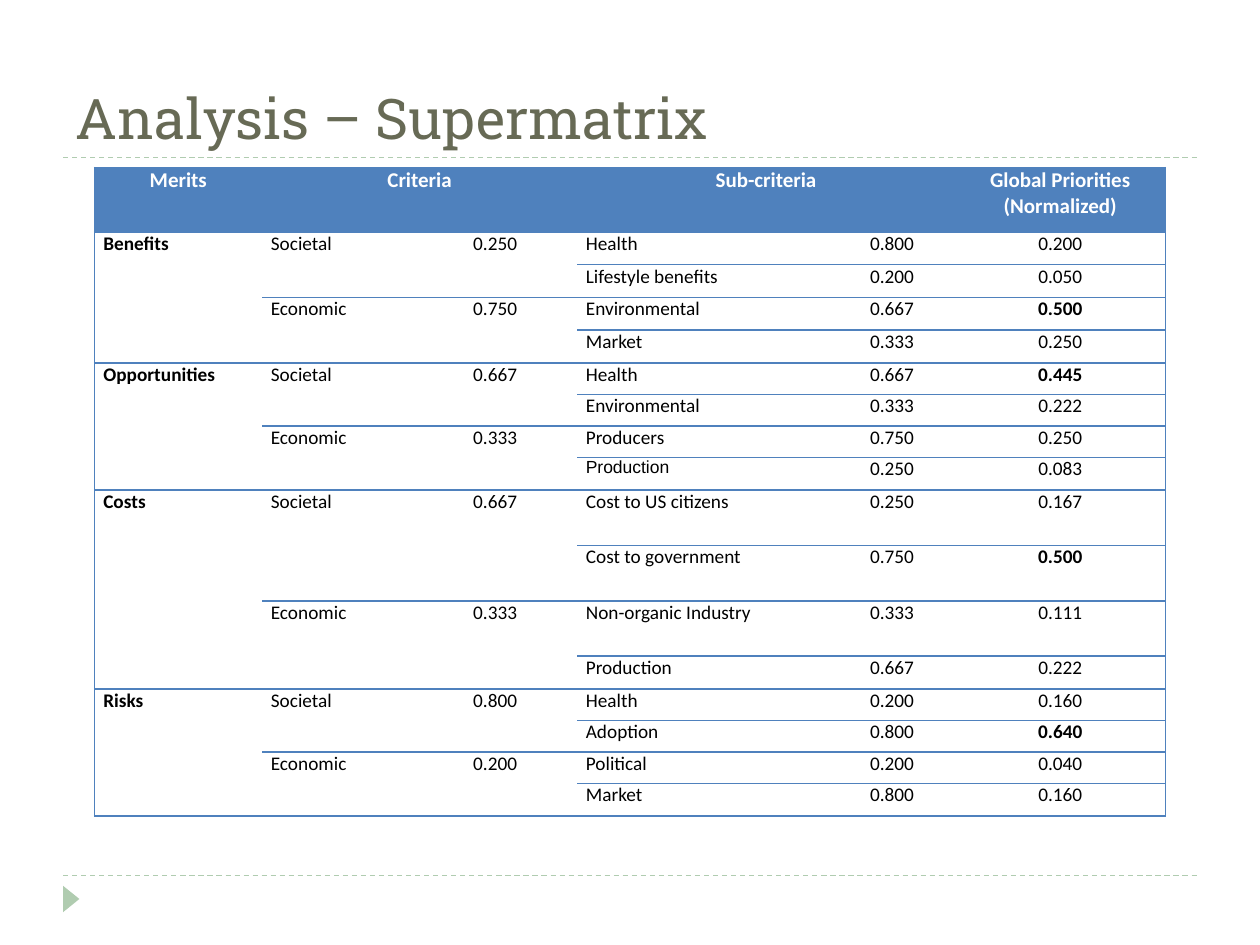
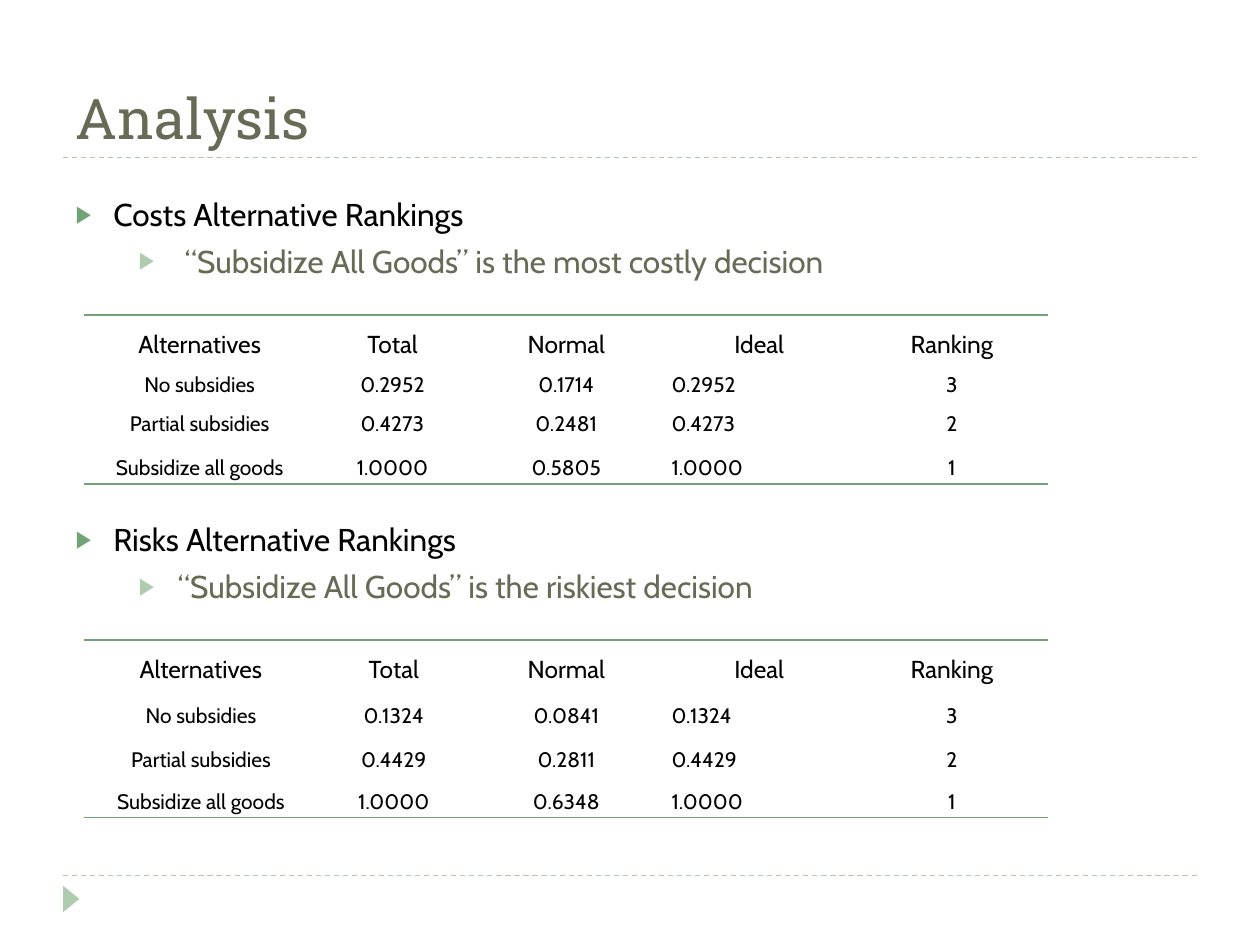
"""Build two analysis slides: a supermatrix and the alternative rankings."""
from lxml.etree import SubElement
from pptx import Presentation
from pptx.dml.color import RGBColor
from pptx.enum.dml import MSO_LINE
from pptx.enum.shapes import MSO_CONNECTOR, MSO_SHAPE
from pptx.enum.text import MSO_ANCHOR, MSO_AUTO_SIZE, PP_ALIGN
from pptx.oxml.ns import qn
from pptx.util import Inches, Pt

COLORS = {"title": "676A55", "rule": "B0CCB0", "accent": "72A376",
          "matrix": "4F81BD", "text": "000000", "white": "FFFFFF"}
NO_STYLE = "{2D5ABB26-0587-4C30-8999-92F81FD0307C}"
LEFT, CENTER = PP_ALIGN.LEFT, PP_ALIGN.CENTER

MATRIX_HEADER = ["Merits", "Criteria", "", "Sub-criteria", "", "Global Priorities (Normalized)"]
MATRIX = {
    "Benefits": [
        ("Societal", "0.250", [("Health", "0.800", "0.200"),
                               ("Lifestyle benefits", "0.200", "0.050")]),
        ("Economic", "0.750", [("Environmental", "0.667", "0.500"),
                               ("Market", "0.333", "0.250")])],
    "Opportunities": [
        ("Societal", "0.667", [("Health", "0.667", "0.445"),
                               ("Environmental", "0.333", "0.222")]),
        ("Economic", "0.333", [("Producers", "0.750", "0.250"),
                               ("Production", "0.250", "0.083")])],
    "Costs": [
        ("Societal", "0.667", [("Cost to US citizens", "0.250", "0.167"),
                               ("Cost to government", "0.750", "0.500")]),
        ("Economic", "0.333", [("Non-organic Industry", "0.333", "0.111"),
                               ("Production", "0.667", "0.222")])],
    "Risks": [
        ("Societal", "0.800", [("Health", "0.200", "0.160"),
                               ("Adoption", "0.800", "0.640")]),
        ("Economic", "0.200", [("Political", "0.200", "0.040"),
                               ("Market", "0.800", "0.160")])],
}
MATRIX_COLUMNS = [1.33, 1.2, 1.3, 2, 1, 1.67]
MATRIX_ROWS = [0.51] + [0.26] * 4 + [0.25] * 3 + [0.26] + [0.44] * 3 + [0.26] + [0.25] * 3 + [0.26]
MATRIX_ALIGN = [LEFT, LEFT, CENTER, LEFT, CENTER, CENTER]

RANKING_HEADER = ["Alternatives", "Total", "Normal", "Ideal", "Ranking"]
RANKINGS = [
    {"points": ["Costs Alternative Rankings", " “Subsidize All Goods” is the most costly decision"],
     "box": (0.5, 1.5, 9, 0.92), "corner": (0.67, 2.5),
     "columns": [1.83, 1.23, 1.53, 1.53, 1.53], "heights": [0.33, 0.28, 0.35, 0.33],
     "rows": [["No subsidies", "0.2952", "0.1714", "0.2952", "3"],
              ["Partial subsidies", "0.4273", "0.2481", "0.4273", "2"],
              ["Subsidize all goods", "1.0000", "0.5805", "1.0000", "1"]]},
    {"points": ["Risks Alternative Rankings", "“Subsidize All Goods” is the riskiest decision"],
     "box": (0.5, 4.08, 9, 1.17), "corner": (0.67, 5.08),
     "columns": [1.85, 1.21, 1.53, 1.53, 1.53], "heights": [0.4, 0.35, 0.33, 0.33],
     "rows": [["No subsidies", "0.1324", "0.0841", "0.1324", "3"],
              ["Partial subsidies", "0.4429", "0.2811", "0.4429", "2"],
              ["Subsidize all goods", "1.0000", "0.6348", "1.0000", "1"]]},
]
LEVELS = [{"margin": 0.3, "indent": -0.3, "before": 6, "bullet": "accent", "color": "text"},
          {"margin": 0.81, "indent": -0.31, "before": 5, "bullet": "rule", "color": "title"}]


def set_all(target, values):
    for name, value in values.items():
        setattr(target, name, value)


def rgb(name):
    return RGBColor.from_string(COLORS[name])


def place(shape, box):
    set_all(shape, dict(zip(("left", "top", "width", "height"), map(Inches, box))))


def write(paragraph, text, font, size, color, bold=False):
    run = paragraph.add_run()
    run.text = text
    set_all(run.font, {"name": font, "size": Pt(size), "bold": bold})
    run.font.color.rgb = rgb(color)


def add_slide(presentation, layout, title):
    slide = presentation.slides.add_slide(presentation.slide_layouts[layout])
    place(slide.shapes.title, (0.5, 0.17, 9, 1.08))
    frame = slide.shapes.title.text_frame
    set_all(frame, {"vertical_anchor": MSO_ANCHOR.BOTTOM, "auto_size": MSO_AUTO_SIZE.NONE})
    frame.paragraphs[0].alignment = LEFT
    write(frame.paragraphs[0], title, "Roboto Slab", 32, "title")
    for y in (6.95, 1.25):
        rule = slide.shapes.add_connector(MSO_CONNECTOR.STRAIGHT, Inches(0.5), Inches(y),
                                          Inches(9.5), Inches(y))
        set_all(rule.line, {"width": Pt(0.75), "dash_style": MSO_LINE.DASH})
        rule.line.color.rgb = rgb("rule")
        SubElement(rule._element.spPr, qn("a:effectLst"))
    marker = slide.shapes.add_shape(MSO_SHAPE.ISOSCELES_TRIANGLE,
                                    *map(Inches, (0.46, 7.07, 0.21, 0.13)))
    marker.rotation = 90
    marker.shadow.inherit = False
    marker.fill.solid()
    marker.fill.fore_color.rgb = rgb("rule")
    marker.line.fill.background()
    return slide


def add_plain_table(slide, corner, columns, heights):
    size = (sum(columns), sum(heights))
    table = slide.shapes.add_table(len(heights), len(columns),
                                   *map(Inches, corner + size)).table
    set_all(table, {"first_row": False, "horz_banding": False})
    table._tbl.tblPr.find(qn("a:tableStyleId")).text = NO_STYLE
    for column, width in zip(table.columns, columns):
        column.width = Inches(width)
    for row, height in zip(table.rows, heights):
        row.height = Inches(height)
    return table


def fill_cell(cell, text, alignment, size, font, color, bold=False, spacing=None):
    set_all(cell, {"margin_left": Inches(0.07), "margin_right": Inches(0.07),
                   "margin_top": 0, "margin_bottom": 0})
    paragraph = cell.text_frame.paragraphs[0]
    set_all(paragraph, {"alignment": alignment, "line_spacing": spacing})
    write(paragraph, text, font, size, color, bold)


def paint_cell(cell, fill, line, sides):
    properties = cell._tc.get_or_add_tcPr()
    for side in [side for side in "LRTB" if side in sides]:
        border = SubElement(properties, qn(f"a:ln{side}"), w=str(Pt(1)))
        solid = SubElement(border, qn("a:solidFill"))
        SubElement(solid, qn("a:srgbClr"), val=COLORS[line])
    if fill:
        cell.fill.solid()
        cell.fill.fore_color.rgb = rgb(fill)
    else:
        cell.fill.background()


def matrix_rows():
    for merit, criteria in MATRIX.items():
        top = max(priority for _, _, subs in criteria for _, _, priority in subs)
        for number, (criterion, weight, subs) in enumerate(criteria):
            for index, sub in enumerate(subs):
                first = index == 0
                yield [merit if first and number == 0 else "", criterion if first else "",
                       weight if first else "", *sub], sub[2] == top


def build_matrix(presentation):
    slide = add_slide(presentation, 5, "Analysis – Supermatrix")
    table = add_plain_table(slide, (0.75, 1.33), MATRIX_COLUMNS, MATRIX_ROWS)
    last_row, last_column = len(MATRIX_ROWS) - 1, len(MATRIX_COLUMNS) - 1
    for column in (1, 3):
        table.cell(0, column).merge(table.cell(0, column + 1))
    for column, span in ((0, 4), (1, 2), (2, 2)):
        for row in range(1, last_row, span):
            table.cell(row, column).merge(table.cell(row + span - 1, column))
    rows = [(MATRIX_HEADER, True), *matrix_rows()]
    for r, (values, strong) in enumerate(rows):
        for c, text in enumerate(values):
            cell = table.cell(r, c)
            if text and r == 0:
                fill_cell(cell, text, CENTER, 12, "Calibri", "white", True)
            elif text:
                odd = r == 8 and c == 3
                fill_cell(cell, text, MATRIX_ALIGN[c], 10 if odd else 11,
                          "Arial" if odd else "Calibri", "text",
                          c == 0 or (strong and c == last_column))
            sides = "" if cell.is_spanned else "TB"
            sides += "L" * (c == 0) + "R" * (c == last_column) + "B" * (r == last_row)
            paint_cell(cell, None if r else "matrix", "matrix", sides)


def write_points(shape, points, box):
    place(shape, box)
    frame = shape.text_frame
    set_all(frame, {"word_wrap": True, "auto_size": MSO_AUTO_SIZE.NONE,
                    "vertical_anchor": MSO_ANCHOR.TOP})
    for number, (text, level) in enumerate(zip(points, LEVELS)):
        paragraph = frame.add_paragraph() if number else frame.paragraphs[0]
        set_all(paragraph, {"level": number, "alignment": LEFT,
                            "space_before": Pt(level["before"])})
        write(paragraph, text, "Cabin", 18, level["color"])
        properties = paragraph._p.get_or_add_pPr()
        properties.set("marL", str(Inches(level["margin"])))
        properties.set("indent", str(Inches(level["indent"])))
        color = SubElement(properties, qn("a:buClr"))
        SubElement(color, qn("a:srgbClr"), val=COLORS[level["bullet"]])
        SubElement(properties, qn("a:buSzPct"), val="76000")
        SubElement(properties, qn("a:buFont"), typeface="Arial")
        SubElement(properties, qn("a:buChar"), char="▶")


def build_rankings(presentation):
    slide = add_slide(presentation, 3, "Analysis")
    for number, ranking in enumerate(RANKINGS, start=1):
        write_points(slide.placeholders[number], ranking["points"], ranking["box"])
        table = add_plain_table(slide, ranking["corner"], ranking["columns"], ranking["heights"])
        rows = [RANKING_HEADER, *ranking["rows"]]
        for r, values in enumerate(rows):
            for c, text in enumerate(values):
                cell = table.cell(r, c)
                fill_cell(cell, text, LEFT if r and c == 3 else CENTER,
                          12 if r else 14, "Cabin", "text", spacing=1.5)
                paint_cell(cell, None, "accent", "T" * (r == 0) + "B" * (r == len(rows) - 1))


def main():
    presentation = Presentation()
    set_all(presentation, {"slide_width": Inches(10), "slide_height": Inches(7.5)})
    build_matrix(presentation)
    build_rankings(presentation)
    presentation.save("out.pptx")


if __name__ == "__main__":
    main()
